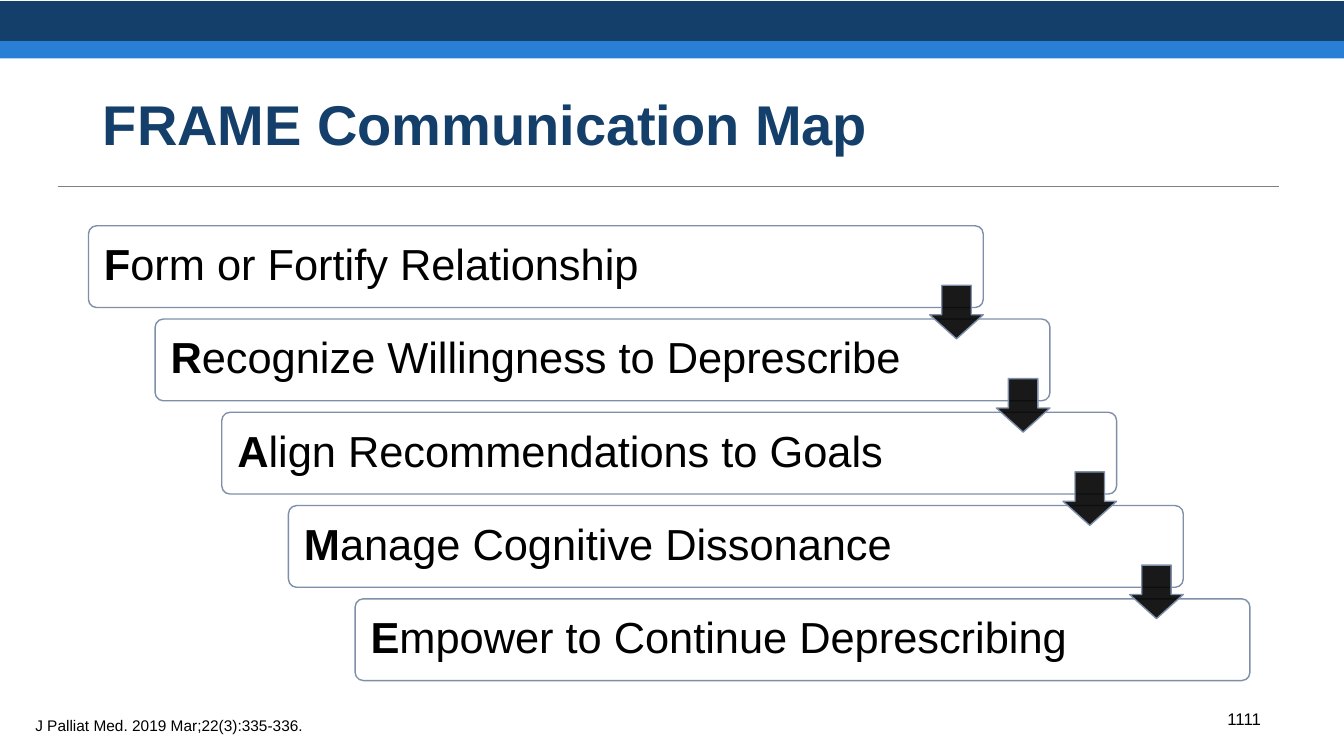
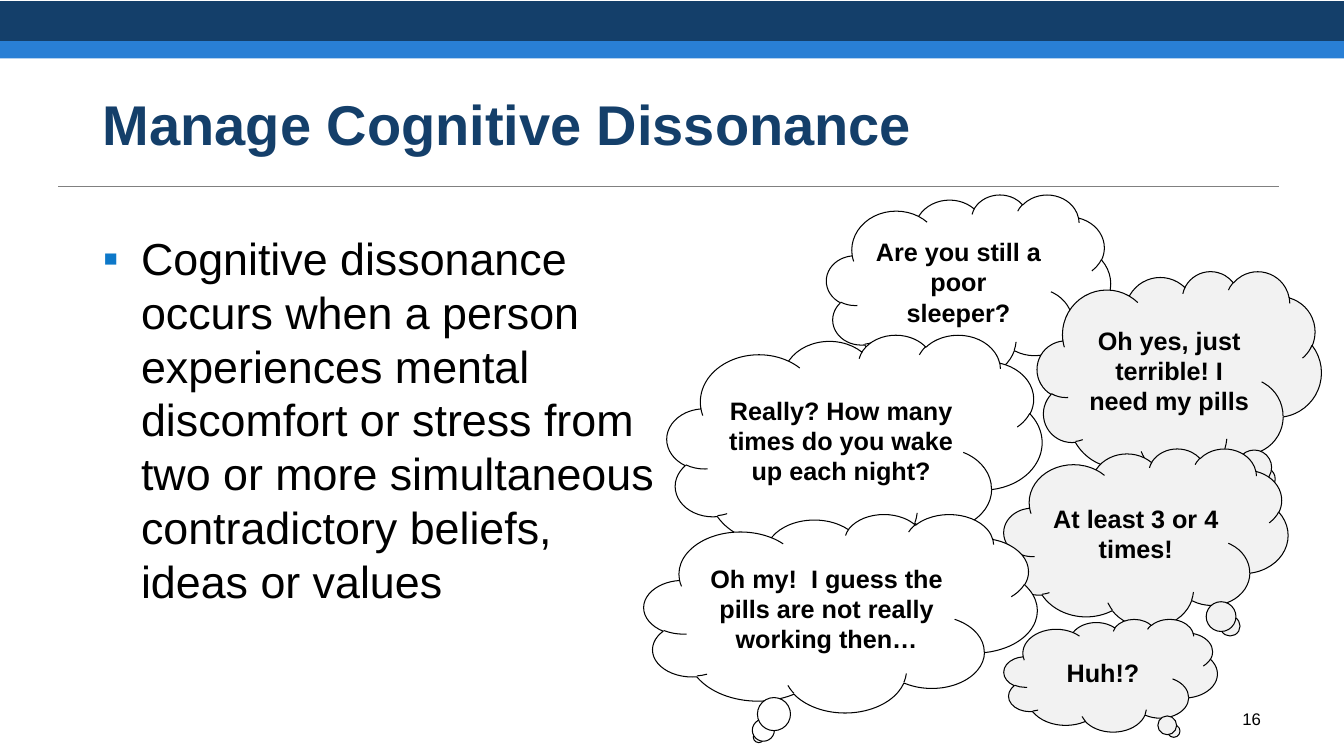
"""Build two slides on the FRAME communication map."""
from lxml.etree import SubElement
from pptx import Presentation
from pptx.dml.color import RGBColor
from pptx.enum.shapes import MSO_CONNECTOR as Conn, MSO_SHAPE as Kind
from pptx.enum.text import MSO_ANCHOR as Anchor, MSO_AUTO_SIZE as Fit, PP_ALIGN as Align
from pptx.oxml.ns import qn
from pptx.util import Cm, Pt

HUES = {
    "navy": "143F6A", "blue": "297FD5", "rule": "808080", "edge": "7F8FA9",
    "mark": "0D78C9", "ink": "000000", "white": "FFFFFF", "pale": "F2F2F2",
}
FONT = "Arial"
BANDS = [("navy", 0.03, 1.07), ("blue", 1.04, 0.43)]

MAP = {"title": "FRAME Communication Map", "page": "1111"}
STEPS = [
    "Form or Fortify Relationship",
    "Recognize Willingness to Deprescribe",
    "Align Recommendations to Goals",
    "Manage Cognitive Dissonance",
    "Empower to Continue Deprescribing",
]
CITE = "J Palliat Med. 2019 Mar;22(3):335-336."

CLASH = {"title": "Manage Cognitive Dissonance", "page": "16"}
BODY = ("Cognitive dissonance occurs when a person experiences mental discomfort or stress "
        "from two or more simultaneous contradictory beliefs, ideas or values")
VOICES = {
    "doctor": ("white", (-0.208, 0.625)),
    "patient": ("pale", (0.304, 0.508)),
}
TALK = [
    ("doctor", "Are you still a poor sleeper?", (20.83, 4.9, 7.16, 4.62)),
    ("patient", "Oh yes, just terrible! I need my pills", (26.14, 6.83, 7.16, 5.26)),
    ("doctor", "Really? How many times do you wake up each night?", (16.81, 8.43, 9.45, 5.59)),
    ("patient", "At least 3 or 4 times!", (25.3, 11.3, 7.16, 4.5)),
    ("doctor", "Oh my!  I guess the pills are not really working then…", (16.23, 12.95, 9.91, 5)),
    ("patient", "Huh!?", (25.3, 15.6, 5.38, 2.84)),
]


def rgb(hue):
    return RGBColor.from_string(HUES[hue])


def write(shape, runs, size, hue="ink", align=Align.LEFT, anchor=Anchor.MIDDLE, lead=None):
    frame = shape.text_frame
    frame.word_wrap = True
    frame.auto_size = Fit.NONE
    frame.vertical_anchor = anchor
    para = frame.paragraphs[0]
    para.alignment = align
    para.space_before = Pt(0)
    if lead:
        para.line_spacing = lead
    for text, bold in runs:
        run = para.add_run()
        run.text = text
        font = run.font
        font.name, font.size, font.bold = FONT, Pt(size), bold
        font.color.rgb = rgb(hue)
    return para


def place(shape, box):
    shape.left, shape.top, shape.width, shape.height = map(Cm, box)


def label(slide, text, box, size, **style):
    write(slide.shapes.add_textbox(*map(Cm, box)), [(text, False)], size, **style)


def draw(slide, kind, box, fill, line=None, width=1, adjust=()):
    shape = slide.shapes.add_shape(kind, *map(Cm, box))
    shape.shadow.inherit = False
    shape.fill.solid()
    shape.fill.fore_color.rgb = rgb(fill)
    if line:
        shape.line.color.rgb = rgb(line)
        shape.line.width = Pt(width)
    else:
        shape.line.fill.background()
    for i, value in enumerate(adjust):
        shape.adjustments[i] = value
    return shape


def start(deck, layout, title, page):
    slide = deck.slides.add_slide(deck.slide_layouts[layout])
    for hue, top, height in BANDS:
        draw(slide, Kind.RECTANGLE, (0, top, 33.87, height), hue)
    rule = slide.shapes.add_connector(Conn.STRAIGHT, Cm(1.47), Cm(4.7), Cm(32.23), Cm(4.7))
    rule.line.color.rgb = rgb("rule")
    rule.line.width = Pt(0.5)
    SubElement(rule.element.spPr, qn("a:effectLst"))
    head = slide.shapes.title
    place(head, (2.34, 1.7, 29.21, 3))
    write(head, [(title, True)], 40, "navy", lead=0.9)
    label(slide, page, (24.41, 17.6, 7.62, 1.02), 12, align=Align.RIGHT)
    return slide


def add_map(deck):
    slide = start(deck, 5, **MAP)
    wide, high, head = 22.55, 2.06, 1.35
    spots = [(2.23 + 1.68 * i, 5.69 + 2.35 * i) for i in range(len(STEPS))]
    for text, (left, top) in zip(STEPS, spots):
        card = draw(slide, Kind.ROUNDED_RECTANGLE, (left, top, wide, high),
                    "white", "edge", adjust=[0.1])
        card.text_frame.margin_left = Cm(0.33)
        write(card, [(text[0], True), (text[1:], False)], 31, lead=0.9)
    for left, top in spots[:-1]:
        arrow = draw(slide, Kind.DOWN_ARROW, (left + wide - head, top + 1.5, head, head),
                     "ink", "edge", adjust=[0.55, 0.45])
        tint = arrow.element.spPr.find(qn("a:solidFill"))[0]
        SubElement(tint, qn("a:alpha"), val="90000")
    label(slide, CITE, (0.64, 17.91, 10.16, 0.74), 11, anchor=Anchor.TOP)


def add_clash(deck):
    slide = start(deck, 1, **CLASH)
    body = slide.placeholders[1]
    place(body, (2.34, 5.69, 14.61, 11.48))
    para = write(body, [(BODY, False)], 32, anchor=Anchor.TOP)
    para.space_after = Pt(2)
    props = para._p.get_or_add_pPr()
    props.set("marL", str(Cm(0.96)))
    props.set("indent", str(-Cm(0.96)))
    tint = SubElement(props, qn("a:buClr"))
    SubElement(tint, qn("a:srgbClr"), val=HUES["mark"])
    SubElement(props, qn("a:buFont"), typeface=FONT)
    SubElement(props, qn("a:buChar"), char="▪")
    for who, text, box in TALK:
        fill, tail = VOICES[who]
        cloud = draw(slide, Kind.CLOUD_CALLOUT, box, fill, "ink", 0.75, tail)
        write(cloud, [(text, True)], 18, align=Align.CENTER)


def main():
    deck = Presentation()
    deck.slide_width, deck.slide_height = Cm(33.87), Cm(19.05)
    add_map(deck)
    add_clash(deck)
    deck.save("out.pptx")


if __name__ == "__main__":
    main()
